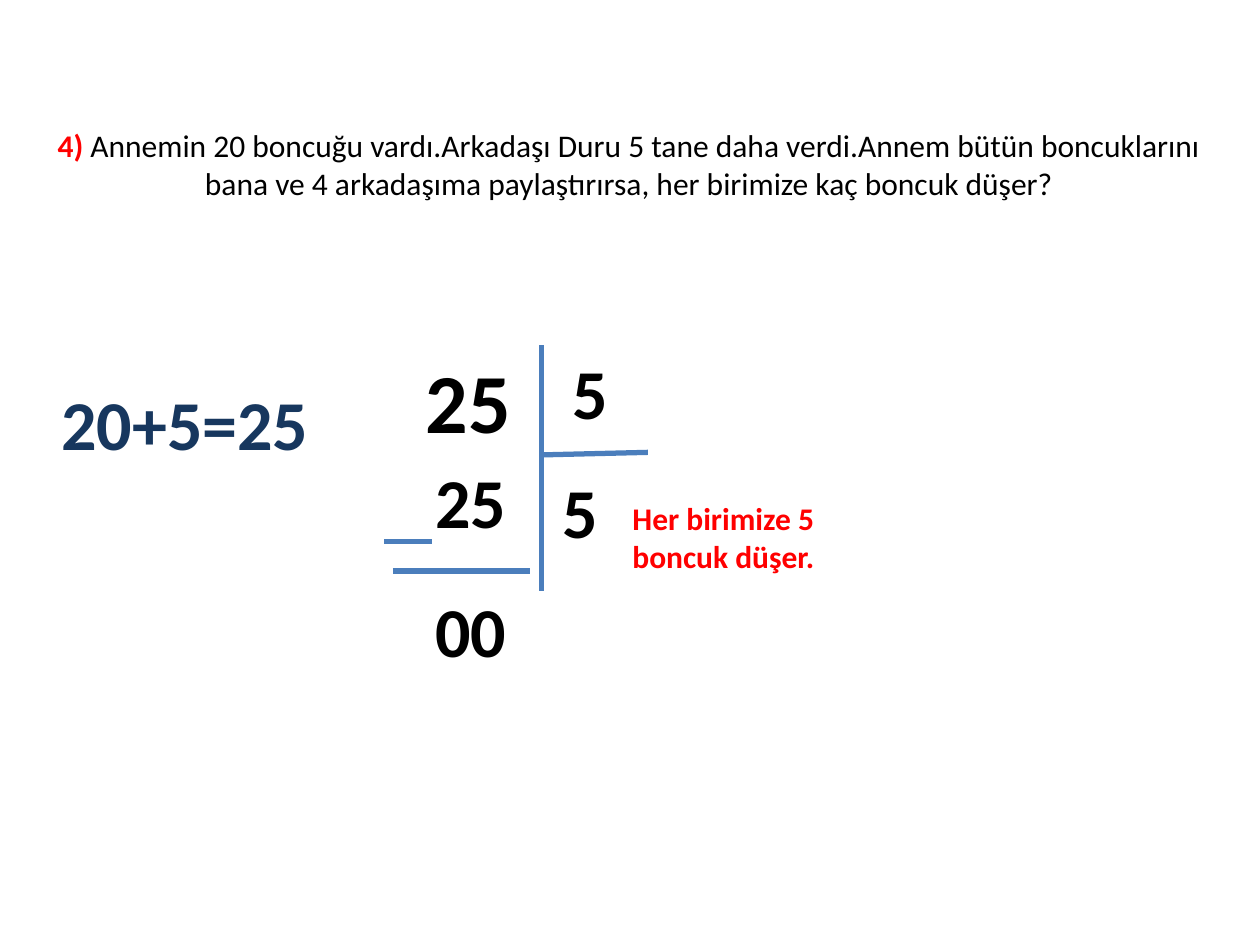
from lxml.etree import SubElement
from pptx import Presentation
from pptx.dml.color import RGBColor
from pptx.enum.shapes import MSO_CONNECTOR as Link
from pptx.enum.text import MSO_ANCHOR as Anchor, MSO_AUTO_SIZE as Fit, PP_ALIGN as Align
from pptx.oxml.ns import qn
from pptx.util import Cm, Pt

BLACK = RGBColor(0x00, 0x00, 0x00)
RED = RGBColor(0xFF, 0x00, 0x00)
NAVY = RGBColor(0x17, 0x37, 0x5E)
BLUE = RGBColor(0x4B, 0x7E, 0xBC)


class Sheet:
    """Style and current slide of a maths worksheet."""

    font = "Calibri"
    rule = Pt(3)

    def __init__(self, deck):
        self.slide = deck.slides.add_slide(deck.slide_layouts[5])

    def style(self, run, size, color, bold=True):
        font = run.font
        font.name, font.size, font.bold = self.font, Pt(size), bold
        font.color.rgb = color

    def title(self, mark, text, left, top, width, height, inset):
        box = self.slide.shapes.title
        box.left, box.top = Cm(left), Cm(top)
        box.width, box.height = Cm(width), Cm(height)
        frame = box.text_frame
        frame.word_wrap, frame.auto_size = True, Fit.NONE
        frame.vertical_anchor, frame.margin_top = Anchor.TOP, Cm(inset)
        para = frame.paragraphs[0]
        para.text, para.alignment = mark, Align.CENTER
        para.add_run().text = text
        self.style(para.runs[0], 18, RED)
        self.style(para.runs[1], 18, BLACK, bold=False)

    def text(self, text, left, top, width, height=1.96, size=40, color=BLACK):
        box = self.slide.shapes.add_textbox(Cm(left), Cm(top), Cm(width), Cm(height))
        frame = box.text_frame
        frame.word_wrap, frame.auto_size = True, Fit.SHAPE_TO_FIT_TEXT
        frame.text = text
        self.style(frame.paragraphs[0].runs[0], size, color)

    def line(self, x1, y1, x2, y2):
        line = self.slide.shapes.add_connector(Link.STRAIGHT, Cm(x1), Cm(y1), Cm(x2), Cm(y2))
        line.line.color.rgb, line.line.width = BLUE, self.rule
        SubElement(line._element.spPr, qn("a:effectLst"))


def main():
    deck = Presentation()
    deck.slide_width, deck.slide_height = Cm(25.4), Cm(19.05)
    sheet = Sheet(deck)

    # Question
    sheet.title(
        "4) ",
        "Annemin 20 boncuğu vardı.Arkadaşı Duru 5 tane daha verdi.Annem bütün "
        "boncuklarını bana ve 4 arkadaşıma paylaştırırsa, her birimize kaç boncuk düşer?",
        0.58, 0.76, 24.2, 7.77, inset=1.78)

    # Division bars, subtraction rule and minus sign
    bar = 10.92
    sheet.line(bar, 6.96, bar, 11.91)
    sheet.line(bar, 9.17, 13.06, 9.12)
    sheet.line(7.92, 11.51, 10.69, 11.51)
    sheet.line(7.75, 10.92, 8.71, 10.92)

    # Dividend, divisor, quotient, product and remainder
    sheet.text("25", 8.33, 6.93, 2.39, 2.31, size=48)
    sheet.text("5", 11.3, 6.93, 1.78)
    sheet.text("5", 11.1, 9.32, 2.18)
    sheet.text("25", 8.53, 9.12, 3.38)
    sheet.text("00", 8.53, 11.71, 2.77)

    # Answer and first step
    sheet.text("Her birimize 5 boncuk düşer.", 12.5, 9.93, 5.77, 1.8, size=18, color=RED)
    sheet.text("20+5=25", 0.99, 7.54, 5.56, color=NAVY)

    deck.save("out.pptx")


if __name__ == "__main__":
    main()
